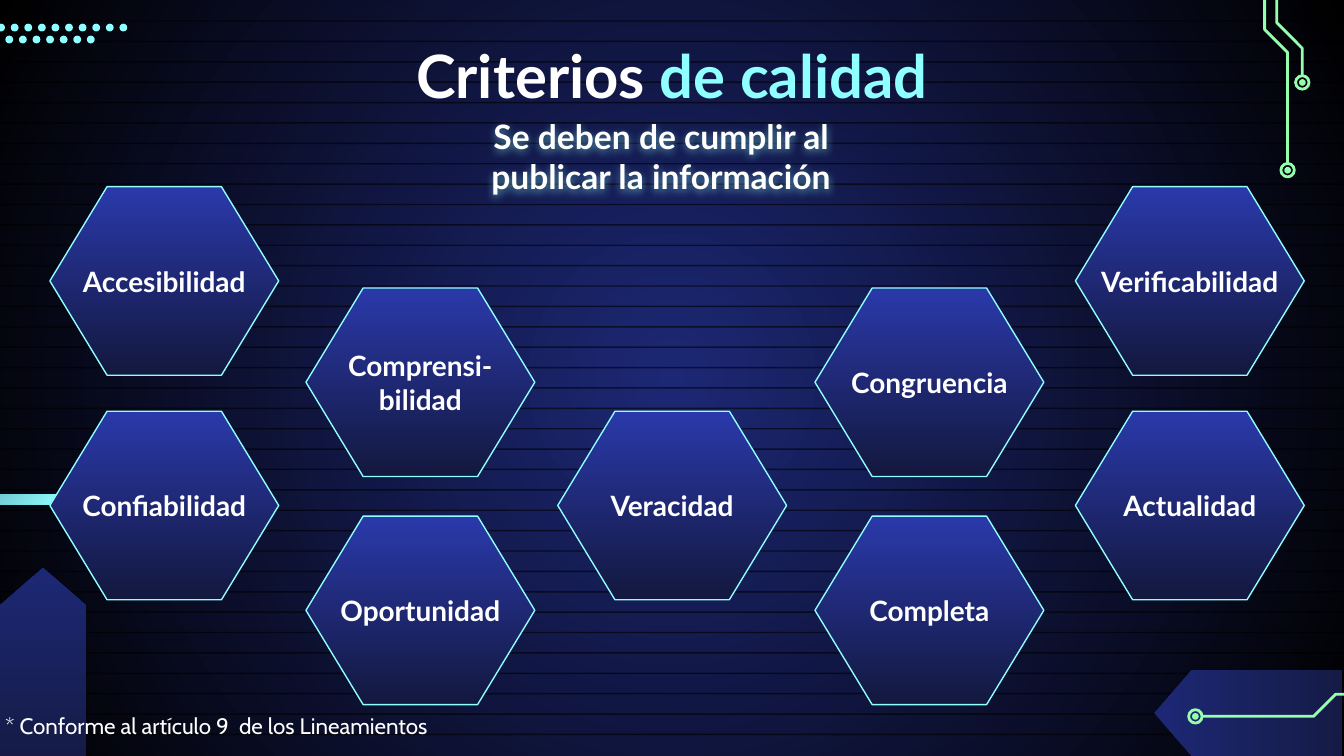
import lxml.etree
import pptx
import pptx.dml.color
import pptx.enum.shapes
import pptx.enum.text
import pptx.oxml.ns
import pptx.util

Pt = pptx.util.Pt
qn = pptx.oxml.ns.qn
SHAPE = pptx.enum.shapes.MSO_SHAPE
ALIGN = pptx.enum.text.PP_ALIGN
ANCHOR = pptx.enum.text.MSO_ANCHOR

WHITE, CYAN, GREEN = "FFFFFF", "8FFFFF", "95FFAE"
NAVY, DARK, BLACK = "1D2875", "151B46", "000000"


def rgb(value):
    return pptx.dml.color.RGBColor.from_string(value)


class Deck:
    font = "Lato"
    inset = 7.2
    hex_w, hex_h = 122.6, 101

    def __init__(self, width, height):
        self.prs = pptx.Presentation()
        self.prs.slide_width, self.prs.slide_height = Pt(width), Pt(height)
        self.s = self.prs.slides.add_slide(self.prs.slide_layouts[6])

    def gradient(self, fill, colors, angle=0):
        fill.gradient()
        fill.gradient_angle = angle
        for stop, color, position in zip(fill.gradient_stops, colors, (0, 1)):
            stop.color.rgb = rgb(color)
            stop.position = position

    def background(self, *colors):
        self.gradient(self.s.background.fill, colors)
        grad = self.s.element.find(".//" + qn("a:gradFill"))
        grad.remove(grad.find(qn("a:lin")))
        circle = lxml.etree.SubElement(grad, qn("a:path"), path="circle")
        sides = dict.fromkeys("ltrb", "50000")
        lxml.etree.SubElement(circle, qn("a:fillToRect"), **sides)

    def paint(self, sp, fill=None, line=None, weight=1.5, angle=0):
        sp.shadow.inherit = False
        if fill is None:
            sp.fill.background()
        elif isinstance(fill, tuple):
            self.gradient(sp.fill, fill, angle)
        else:
            sp.fill.solid()
            sp.fill.fore_color.rgb = rgb(fill)
        if line is None:
            sp.line.fill.background()
        else:
            sp.line.color.rgb = rgb(line)
            sp.line.width = Pt(weight)

    def shape(self, kind, x, y, w, h, rotation=0, **style):
        sp = self.s.shapes.add_shape(kind, Pt(x), Pt(y), Pt(w), Pt(h))
        sp.rotation = rotation
        self.paint(sp, **style)
        return sp

    def outline(self, points, close, **style):
        first, *rest = [(Pt(x), Pt(y)) for x, y in points]
        builder = self.s.shapes.build_freeform(*first)
        builder.add_line_segments(rest, close=close)
        sp = builder.convert_to_shape()
        self.paint(sp, **style)
        return sp

    def stripe(self, y):
        sp = self.shape(SHAPE.RECTANGLE, 0, y, 720, 0.8, fill=BLACK)
        color = sp.element.find(".//" + qn("a:srgbClr"))
        lxml.etree.SubElement(color, qn("a:alpha"), val="59000")

    def circle(self, cx, cy, d, **style):
        self.shape(SHAPE.OVAL, cx - d / 2, cy - d / 2, d, d, **style)

    def circuit(self, points, node):
        self.outline(points, False, line=GREEN)
        self.circle(*node, 7.2, line=GREEN)
        self.circle(*node, 3.6, fill=GREEN)

    def label(self, sp, runs, size, align=ALIGN.CENTER, anchor=ANCHOR.MIDDLE,
              font=font, bold=True):
        tf = sp.text_frame
        tf.word_wrap = True
        tf.vertical_anchor = anchor
        tf.margin_left = tf.margin_right = Pt(self.inset)
        tf.margin_top = tf.margin_bottom = Pt(self.inset)
        p = tf.paragraphs[0]
        p.alignment = align
        p.font.name, p.font.size, p.font.bold = font, Pt(size), bold
        if len(runs) == 1:
            p.text = runs[0][0]
            p.font.color.rgb = rgb(runs[0][1])
            return
        for text, color in runs:
            r = p.add_run()
            r.text = text
            r.font.color.rgb = rgb(color)

    def text(self, x, y, w, h, runs, size, **style):
        sp = self.s.shapes.add_textbox(Pt(x), Pt(y), Pt(w), Pt(h))
        self.label(sp, runs, size, **style)
        return sp

    def glow(self, sp, color):
        effects = lxml.etree.SubElement(sp.element.spPr, qn("a:effectLst"))
        shadow = lxml.etree.SubElement(
            effects, qn("a:outerShdw"), blurRad=str(Pt(4.5)),
            dist=str(Pt(1.5)), dir="5400000", algn="bl", rotWithShape="0")
        tint = lxml.etree.SubElement(shadow, qn("a:srgbClr"), val=color)
        lxml.etree.SubElement(tint, qn("a:alpha"), val="50000")

    def hexagon(self, x, y, name):
        w, h = self.hex_w, self.hex_h
        corners = [(0.25, 0), (0, 0.5), (0.25, 1), (0.75, 1), (1, 0.5), (0.75, 0)]
        sp = self.outline([(x + w * u, y + h * v) for u, v in corners], True,
                          fill=("2A39AA", "13183E"), angle=270,
                          line=CYAN, weight=0.75)
        self.label(sp, [(name, WHITE)], 15)


def main():
    deck = Deck(720, 405)
    deck.background(NAVY, BLACK)
    for i in range(36, 0, -1):
        deck.stripe(10.92 * i)

    deck.circuit([(677.5, -49), (677.5, 15.8), (689.8, 28.1), (689.8, 87.1)],
                 (689.8, 91.2))
    deck.circuit([(697.7, 40.3), (697.7, 25.9), (684, 12.2), (684, -49)],
                 (697.7, 44.2))
    arrow = dict(fill=(NAVY, DARK), angle=90)
    deck.shape(SHAPE.FLOWCHART_OFFPAGE_CONNECTOR, 645.8, 331.5, 46, 101, 90, **arrow)
    deck.circuit([(780.5, 372), (715.5, 372), (703.7, 383.8), (644.4, 383.8)],
                 (640.4, 383.8))

    for x, y, count in ((5, 21.2, 7), (0.6, 14.8, 10)):
        for i in range(count):
            deck.circle(x + 7.28 * i, y, 4.2, fill=CYAN)
    bar = deck.shape(SHAPE.ROUNDED_RECTANGLE, -124, 264.8, 157, 5.4,
                     fill=(DARK, CYAN), angle=315)
    bar.adjustments[0] = 0.5
    deck.shape(SHAPE.FLOWCHART_OFFPAGE_CONNECTOR, 0, 304, 46, 101, 180, **arrow)

    columns = [
        (26.7, (100, "Accesibilidad"), (220.3, "Confiabilidad")),
        (163.9, (154.3, "Comprensi-\nbilidad"), (276.5, "Oportunidad")),
        (298.8, (220.3, "Veracidad")),
        (436.6, (154.3, "Congruencia"), (276.5, "Completa")),
        (576.1, (100, "Verificabilidad"), (220.3, "Actualidad")),
    ]
    for x, *cells in columns:
        for y, name in cells:
            deck.hexagon(x, y, name)

    deck.text(180.7, 17.5, 358.6, 45.4,
              [("Criterios ", WHITE), ("de calidad", CYAN)], 32)
    subtitle = deck.text(228.2, 25.2, 252, 116.6,
                         [("Se deben de cumplir al publicar la información", WHITE)], 18)
    deck.glow(subtitle, CYAN)
    deck.text(-4.3, 374.4, 280, 30.2,
              [("* Conforme al artículo 9  de los Lineamientos", WHITE)], 12,
              align=ALIGN.LEFT, anchor=ANCHOR.TOP, font="Cabin", bold=False)
    deck.prs.save("out.pptx")


if __name__ == "__main__":
    main()
